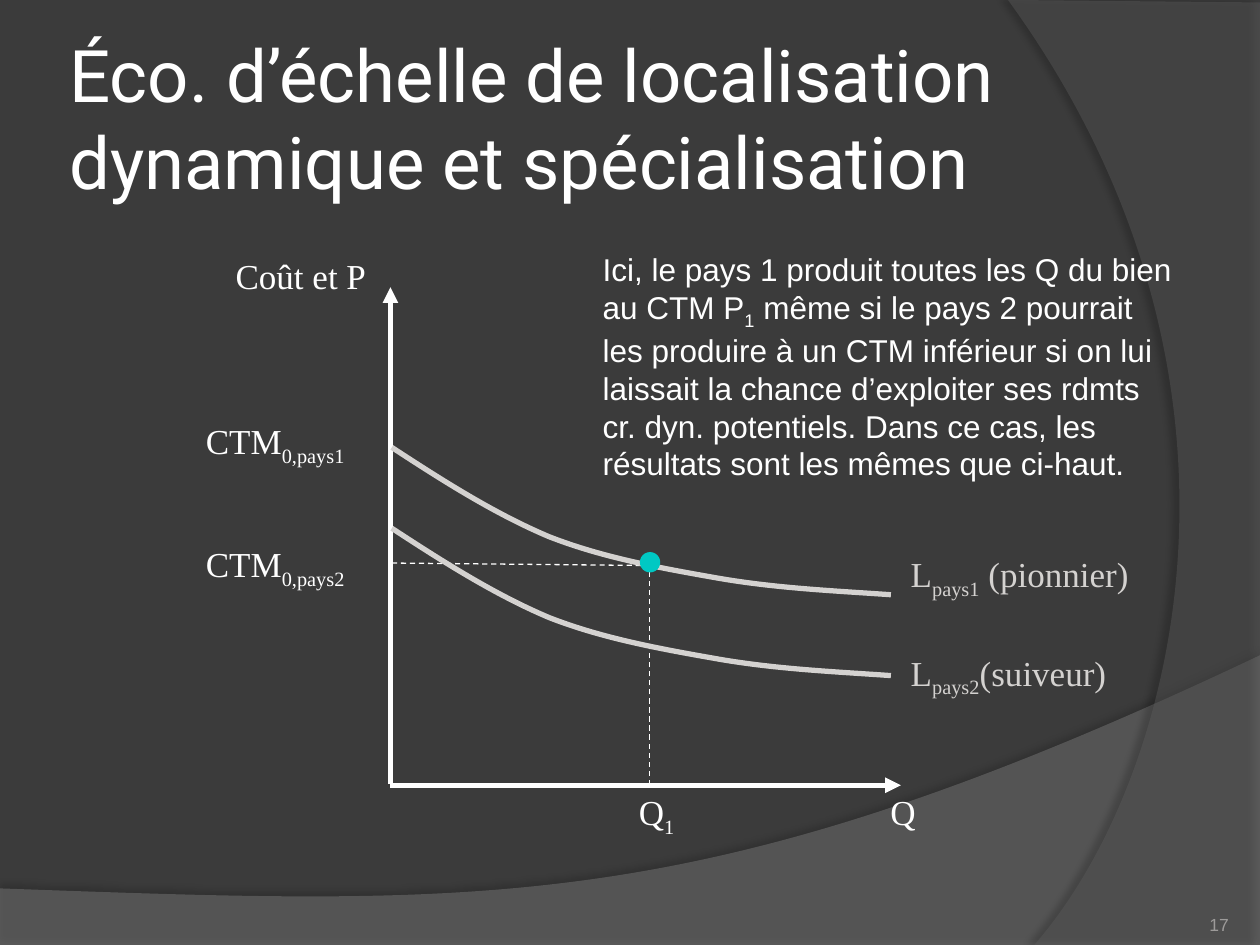
from lxml import etree
from pptx import Presentation
from pptx.dml.color import RGBColor
from pptx.enum.dml import MSO_LINE_DASH_STYLE as Dash
from pptx.enum.shapes import MSO_CONNECTOR as Connector, MSO_SHAPE as Shape
from pptx.enum.text import MSO_ANCHOR as Anchor, MSO_AUTO_SIZE as AutoSize, PP_ALIGN as Align
from pptx.oxml import parse_xml
from pptx.oxml.ns import nsdecls, qn
from pptx.util import Cm, Pt

COLORS = {
    "background": "3B3B3B", "wave": "7F7F7F", "side": "5E5E5E", "shadow": "000000",
    "text": "FFFFFF", "curve": "D4D2D0", "point": "00C8C3", "number": "9D9B9A",
}
SERIF = "Times New Roman"
UNIT = Cm(0.01)


def outline(shapes, start, parts, close):
    """Draw a path in cm; a part is (end,) for a line or (c1, c2, end) for a cubic."""
    start, *ends = [tuple(round(v * 100) for v in point)
                    for point in [start] + [part[-1] for part in parts]]
    builder = shapes.build_freeform(*start, scale=UNIT)
    builder.add_line_segments(ends, close=close)
    shape = builder.convert_to_shape()
    left, top = shape.left / UNIT, shape.top / UNIT
    for segment, part in zip(list(shape._element.iter(qn("a:lnTo"))), parts):
        if len(part) == 3:
            segment.tag = qn("a:cubicBezTo")
            for i, (x, y) in enumerate(part[:2]):
                control = etree.Element(qn("a:pt"), x=str(round(x * 100 - left)),
                                        y=str(round(y * 100 - top)))
                segment.insert(i, control)
    return shape


def write(para, runs, font, size, color):
    """Add (text, is_subscript) runs to a paragraph."""
    for text, subscript in runs:
        span = para.add_run()
        span.text = text
        span.font.name = font
        span.font.size = Pt(size)
        span.font.color.rgb = RGBColor.from_string(COLORS[color])
        if subscript:
            span._r.get_or_add_rPr().set("baseline", "-25000")


deck = Presentation()
deck.slide_width, deck.slide_height = Cm(25.4), Cm(19.05)
page = deck.slides.add_slide(deck.slide_layouts[5])
page.background.fill.solid()
page.background.fill.fore_color.rgb = RGBColor.from_string(COLORS["background"])
shapes = page.shapes

# Background waves: colour, opacity, shadow opacity, distance, direction, start, parts
wave = [((0, 19.08),), ((25.4, 19.08),), ((25.4, 13.21),),
        ((14.2, 18.52), (9.93, 18.26), (0, 17.91))]
side = [((25.4, 19.05),), ((20.85, 19.05),),
        ((23.75, 15.72), (25.86, 7.62), (20.32, 0)), ((25.4, 0.05),)]
for color, opacity, shade, distance, angle, start, parts in (
        ("wave", 45, 35, 3.5, 270, (0, 17.91), wave),
        ("side", 40, 45, 4, 180, (25.4, 0.05), side)):
    area = outline(shapes, start, parts, close=True)
    area.fill.solid()
    area.fill.fore_color.rgb = RGBColor.from_string(COLORS[color])
    area.line.fill.background()
    fill_color = area._element.spPr.find(qn("a:solidFill"))[0]
    etree.SubElement(fill_color, qn("a:alpha"), val=str(opacity * 1000))
    area._element.spPr.append(parse_xml(
        f'<a:effectLst {nsdecls("a")}><a:outerShdw blurRad="{Pt(4)}" dist="{Pt(distance)}" '
        f'dir="{angle * 60000}" algn="ctr" rotWithShape="0"><a:srgbClr val="{COLORS["shadow"]}">'
        f'<a:alpha val="{shade * 1000}"/></a:srgbClr></a:outerShdw></a:effectLst>'))

# Title
title = shapes.title
title.left, title.top, title.width, title.height = Cm(1.27), Cm(0.76), Cm(24.13), Cm(3.18)
frame = title.text_frame
frame.word_wrap = True
frame.auto_size = AutoSize.NONE
frame.vertical_anchor = Anchor.MIDDLE
frame.margin_left = frame.margin_right = frame.margin_top = frame.margin_bottom = Cm(0.13)
frame.paragraphs[0].alignment = Align.LEFT
write(frame.paragraphs[0],
      [("Éco. d’échelle de localisation dynamique et spécialisation", False)],
      "Roboto", 41.4, "text")

# Axes with arrowheads, then dashed guides to the equilibrium
for x1, y1, x2, y2, is_axis in (
        (7.87, 15.83, 18.16, 15.83, True),
        (7.87, 15.8, 7.87, 5.79, True),
        (7.9, 11.35, 13.1, 11.4, False),
        (13.1, 15.82, 13.1, 11.53, False)):
    line = shapes.add_connector(Connector.STRAIGHT, Cm(x1), Cm(y1), Cm(x2), Cm(y2))
    line.line.color.rgb = RGBColor.from_string(COLORS["text"])
    line.line.width = Pt(3 if is_axis else 0.75)
    if is_axis:
        etree.SubElement(line.line._get_or_add_ln(), qn("a:tailEnd"), type="triangle")
    else:
        line.line.dash_style = Dash.DASH
    etree.SubElement(line._element.spPr, qn("a:effectLst"))

# Cost curves: the follower's lies below the pioneer's
cost = [((8.94, 9.7), (9.98, 10.36), (11.07, 10.82)),
        ((12.17, 11.25), (13.36, 11.46), (14.5, 11.66)),
        ((15.67, 11.86), (16.81, 11.91), (17.96, 11.99))]
for drop in (0, 1.63):
    parts = [[(x, y + drop) for x, y in part] for part in cost]
    curve = outline(shapes, (7.9, 9.02 + drop), parts, close=False)
    curve.fill.background()
    curve.line.color.rgb = RGBColor.from_string(COLORS["curve"])
    curve.line.width = Pt(3)
    curve.shadow.inherit = False

# Labels and comment: left, top, width, height, wrap, font, size, colour, runs
comment = [
    ("Ici, le pays 1 produit toutes les Q du bien au CTM P", False), ("1", True),
    (" même si le pays 2 pourrait les produire à un CTM inférieur si on lui laissait la "
     "chance d’exploiter ses rdmts cr. dyn. potentiels. Dans ce cas, les résultats sont "
     "les mêmes que ci-haut.", False)]
for left, top, width, height, wrap, font, size, color, runs in (
        (17.7, 15.82, 1.04, 1.12, False, SERIF, 20, "text", [("Q", False)]),
        (4.5, 5, 3.18, 1.12, False, SERIF, 20, "text", [("Coût et P", False)]),
        (3.9, 8.33, 3.61, 1.12, True, SERIF, 20, "text", [("CTM", False), ("0,pays1", True)]),
        (3.9, 10.82, 3.99, 1.12, True, SERIF, 20, "text", [("CTM", False), ("0,pays2", True)]),
        (12.63, 15.82, 1.27, 1.12, False, SERIF, 20, "text", [("Q", False), ("1", True)]),
        (18.11, 11.02, 5.08, 1.12, False, SERIF, 20, "curve",
         [("L", False), ("pays1", True), (" (pionnier)", False)]),
        (18.11, 13, 4.62, 1.12, False, SERIF, 20, "curve",
         [("L", False), ("pays2", True), ("(suiveur)", False)]),
        (11.9, 4.92, 12.09, 4.88, True, "Arial", 18, "text", comment)):
    box = shapes.add_textbox(Cm(left), Cm(top), Cm(width), Cm(height))
    box.text_frame.word_wrap = wrap
    box.text_frame.auto_size = AutoSize.SHAPE_TO_FIT_TEXT
    write(box.text_frame.paragraphs[0], runs, font, size, color)

# Slide number
box = shapes.add_textbox(Cm(22.66), Cm(17.83), Cm(2.11), Cm(1.02))
frame = box.text_frame
frame.word_wrap = True
frame.vertical_anchor = Anchor.BOTTOM
frame.margin_left = frame.margin_right = frame.margin_top = frame.margin_bottom = Cm(0)
frame.paragraphs[0].alignment = Align.RIGHT
write(frame.paragraphs[0], [("17", False)], "Arial", 10, "number")

# Equilibrium point
point = shapes.add_shape(Shape.FLOWCHART_CONNECTOR, Cm(12.9), Cm(11.13), Cm(0.41), Cm(0.41))
point.fill.solid()
point.fill.fore_color.rgb = RGBColor.from_string(COLORS["point"])
point.line.fill.background()
point.shadow.inherit = False

deck.save("out.pptx")
